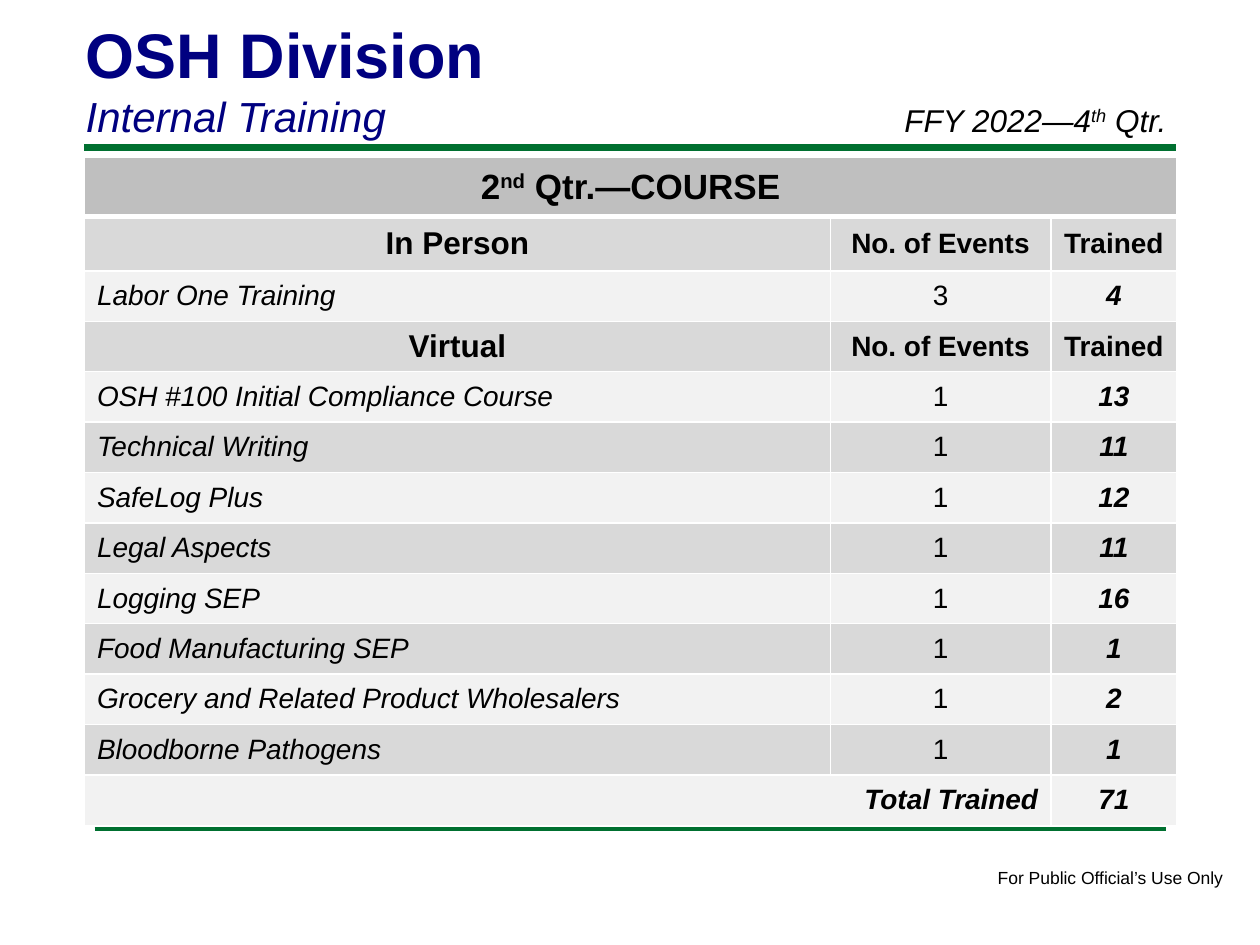
from dataclasses import dataclass

from lxml.etree import SubElement
from pptx import Presentation
from pptx.dml.color import RGBColor
from pptx.enum.shapes import MSO_CONNECTOR
from pptx.enum.text import MSO_ANCHOR, PP_ALIGN
from pptx.oxml import parse_xml
from pptx.oxml.ns import nsdecls, qn
from pptx.util import Inches, Pt


@dataclass(frozen=True)
class Theme:
    font: str = "Arial"
    navy: str = "000080"
    green: str = "007030"
    black: str = "000000"
    white: str = "FFFFFF"
    header: str = "BFBFBF"
    dark_band: str = "D9D9D9"
    light_band: str = "F2F2F2"
    title_size: int = 36
    subtitle_size: int = 24
    table_title_size: int = 20
    section_size: int = 18
    body_size: int = 16
    footer_size: int = 10


theme = Theme()


def write(paragraph, text, size, color=theme.black, bold=False, italic=False, align=PP_ALIGN.LEFT):
    paragraph.alignment = align
    for index, part in enumerate(text.split("^")):
        run = paragraph.add_run()
        run.text = part
        run.font.name = theme.font
        run.font.size = Pt(size)
        run.font.bold = bold
        run.font.italic = italic
        run.font.color.rgb = RGBColor.from_string(color)
        if index % 2:
            run._r.get_or_add_rPr().set("baseline", "30000")


presentation = Presentation()
presentation.slide_width = Inches(10)
presentation.slide_height = Inches(7.5)
slide = presentation.slides.add_slide(presentation.slide_layouts[5])

for left, right, top, width in [(0.67, 9.33, 1.17, 4), (0.75, 9.25, 6.58, 2)]:
    rule = slide.shapes.add_connector(
        MSO_CONNECTOR.STRAIGHT, Inches(left), Inches(top), Inches(right), Inches(top)
    )
    rule.line.color.rgb = RGBColor.from_string(theme.green)
    rule.line.width = Pt(width)
    SubElement(rule._element.spPr, qn("a:effectLst"))

footer = slide.shapes.add_textbox(Inches(7.82), Inches(6.83), Inches(2.01), Inches(0.27))
footer.text_frame.word_wrap = False
write(footer.text_frame.paragraphs[0], "For Public Official’s Use Only", theme.footer_size)

title = slide.shapes.title
title.left, title.top = Inches(0.58), Inches(0.06)
title.width, title.height = Inches(8.25), Inches(1.11)
title.text_frame.word_wrap = True
title.text_frame.vertical_anchor = MSO_ANCHOR.BOTTOM
write(title.text_frame.paragraphs[0], "OSH Division", theme.title_size, theme.navy, bold=True)
subtitle = title.text_frame.add_paragraph()
subtitle.space_before = Pt(0)
write(subtitle, "Internal Training", theme.subtitle_size, theme.navy, italic=True)

rows = [
    ("2^nd^ Qtr.—COURSE", "", ""),
    ("In Person", "No. of Events", "Trained"),
    ("Labor One Training", "3", "4"),
    ("Virtual", "No. of Events", "Trained"),
    ("OSH #100 Initial Compliance Course", "1", "13"),
    ("Technical Writing", "1", "11"),
    ("SafeLog Plus", "1", "12"),
    ("Legal Aspects", "1", "11"),
    ("Logging SEP", "1", "16"),
    ("Food Manufacturing SEP", "1", "1"),
    ("Grocery and Related Product Wholesalers", "1", "2"),
    ("Bloodborne Pathogens", "1", "1"),
    ("Total Trained", "", "71"),
]
column_widths = [5.92, 1.75, 1]
row_heights = [0.47, 0.43] + [0.4] * (len(rows) - 2)
section_rows = (1, 3)
total_row = len(rows) - 1

table = slide.shapes.add_table(
    len(rows), len(column_widths), Inches(0.67), Inches(1.25),
    Inches(sum(column_widths)), Inches(sum(row_heights)),
).table
table.first_row = False
table.horz_banding = False
for column, width in zip(table.columns, column_widths):
    column.width = Inches(width)
for row, height in zip(table.rows, row_heights):
    row.height = Inches(height)
table.cell(0, 0).merge(table.cell(0, 2))
table.cell(total_row, 0).merge(table.cell(total_row, 1))

for row_index, values in enumerate(rows):
    band = theme.dark_band if row_index % 2 else theme.light_band
    for column_index, value in enumerate(values):
        cell = table.cell(row_index, column_index)
        cell.vertical_anchor = MSO_ANCHOR.MIDDLE
        cell.fill.solid()
        cell.fill.fore_color.rgb = RGBColor.from_string(band if row_index else theme.header)
        heavy_side = {0: "lnB", 1: "lnT"}.get(row_index)
        for position, side in enumerate(("lnL", "lnR", "lnT", "lnB")):
            border_width = Pt(3 if side == heavy_side else 1)
            border = parse_xml(
                f'<a:{side} {nsdecls("a")} w="{border_width}"><a:solidFill>'
                f'<a:srgbClr val="{theme.white}"/></a:solidFill></a:{side}>'
            )
            cell._tc.get_or_add_tcPr().insert(position, border)
        if not value:
            continue

        size, bold, italic, align = theme.body_size, True, False, PP_ALIGN.CENTER
        if row_index == 0:
            size = theme.table_title_size
        elif row_index in section_rows:
            size = theme.body_size if column_index else theme.section_size
        elif row_index == total_row:
            italic = True
            align = PP_ALIGN.CENTER if column_index else PP_ALIGN.RIGHT
        else:
            bold = column_index == 2
            italic = column_index != 1
            align = PP_ALIGN.CENTER if column_index else PP_ALIGN.LEFT
        write(cell.text_frame.paragraphs[0], value, size, bold=bold, italic=italic, align=align)

period = slide.shapes.add_textbox(Inches(7.08), Inches(0.75), Inches(2.5), Inches(0.4))
period.text_frame.word_wrap = True
write(period.text_frame.paragraphs[0], "FFY 2022—4^th^ Qtr.", theme.section_size, italic=True)

presentation.save("out.pptx")
